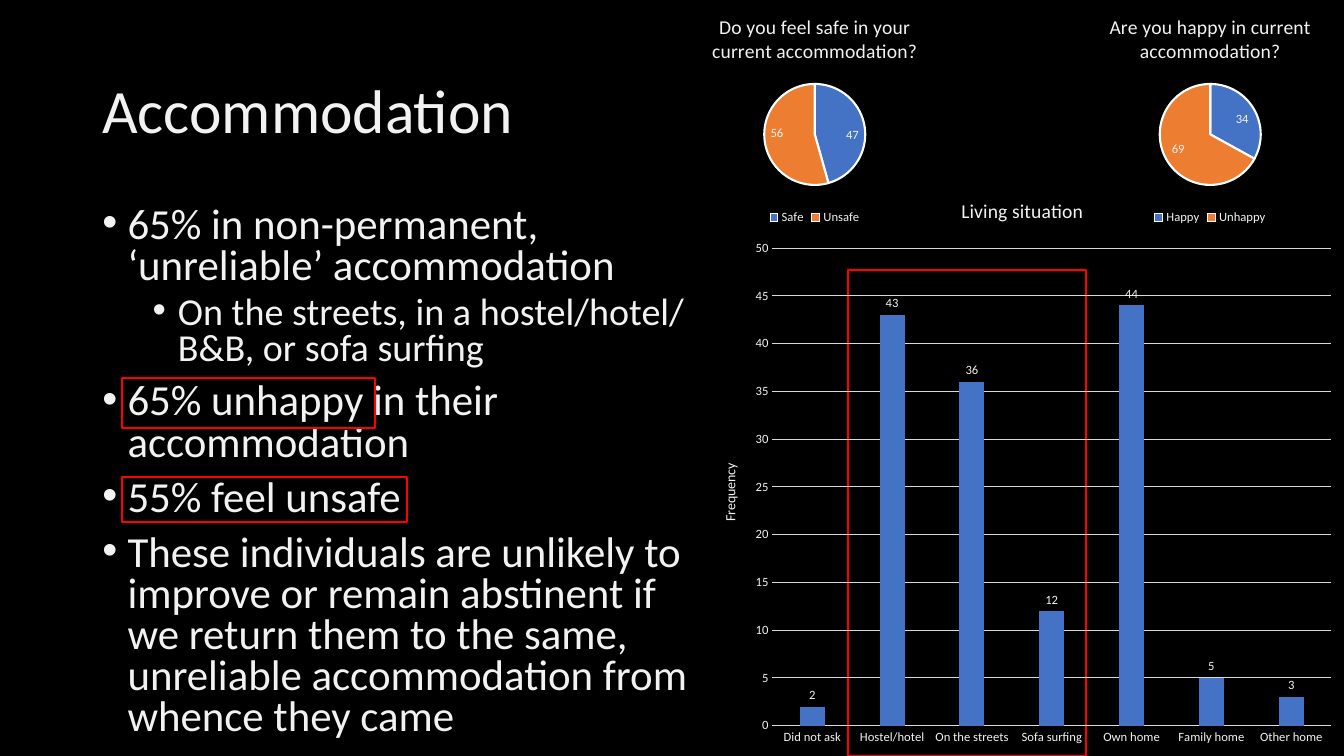
"""Builds the accommodation slide with its survey charts."""
from lxml import etree
from pptx import Presentation, oxml
from pptx.chart.data import CategoryChartData
from pptx.dml.color import RGBColor
from pptx.enum import chart as charts, shapes, text
from pptx.util import Pt

DRAWING = "http://schemas.openxmlformats.org/drawingml/2006/main"
CHART = "http://schemas.openxmlformats.org/drawingml/2006/chart"
PALE, GRID, RED, WHITE = "F2F2F2", "D9D9D9", "FF0000", "FFFFFF"
BLUE, ORANGE = "4472C4", "ED7D31"


def colour(code):
    return RGBColor.from_string(code)


class Page:
    """Holds the style and the current slide."""

    def __init__(self, deck, font="Calibri"):
        self.font = font
        self.slide = deck.slides.add_slide(deck.slide_layouts[6])
        fill = self.slide.background.fill
        fill.solid()
        fill.fore_color.rgb = colour("000000")

    def style(self, font, size):
        font.name = self.font
        font.size = Pt(size)
        font.bold = False
        font.color.rgb = colour(PALE)

    def text_box(self, place, anchor):
        frame = self.slide.shapes.add_textbox(*map(Pt, place)).text_frame
        frame.word_wrap = True
        frame.vertical_anchor = anchor
        return frame

    def title(self, place, wording):
        frame = self.text_box(place, text.MSO_ANCHOR.MIDDLE)
        frame.text = wording
        para = frame.paragraphs[0]
        para.line_spacing = 0.9
        self.style(para.runs[0].font, 44)

    def bullets(self, place, items):
        frame = self.text_box(place, text.MSO_ANCHOR.TOP)
        for index, (level, wording) in enumerate(items):
            para = frame.add_paragraph() if index else frame.paragraphs[0]
            para.text = wording
            para.level = level
            para.line_spacing = 0.8
            para.space_before = Pt(5 if level else 10)
            self.style(para.runs[0].font, 27.2 if level else 30.6)
            props = para._p.get_or_add_pPr()
            props.set("marL", str(Pt(18 + 36 * level)))
            props.set("indent", str(Pt(-18)))
            etree.SubElement(props, f"{{{DRAWING}}}buFont", typeface="Arial")
            etree.SubElement(props, f"{{{DRAWING}}}buChar", char="•")

    def frame(self, place):
        box = self.slide.shapes.add_shape(shapes.MSO_SHAPE.RECTANGLE, *map(Pt, place))
        box.shadow.inherit = False
        box.fill.background()
        box.line.color.rgb = colour(RED)
        box.line.width = Pt(1.5)

    def chart(self, kind, place, title, values, label_position):
        data = CategoryChartData()
        data.categories = list(values)
        data.add_series("Series 1", list(values.values()))
        chart = self.slide.shapes.add_chart(kind, *map(Pt, place), data).chart
        self.style(chart.font, 10)
        chart.element.find(f"{{{CHART}}}txPr").addprevious(oxml.parse_xml(
            f'<c:spPr xmlns:c="{CHART}" xmlns:a="{DRAWING}">'
            '<a:noFill/><a:ln><a:noFill/></a:ln></c:spPr>'))
        self.heading(chart.chart_title, title, 14)
        chart.chart_title.include_in_layout = False
        plot = chart.plots[0]
        plot.has_data_labels = True
        labels = plot.data_labels
        labels.show_value = True
        labels.position = label_position
        self.style(labels.font, 9)
        return chart

    def heading(self, holder, wording, size):
        holder.text_frame.text = wording
        self.style(holder.text_frame.paragraphs[0].runs[0].font, size)

    def pie(self, place, title, values):
        chart = self.chart(charts.XL_CHART_TYPE.PIE, place, title, values,
                           charts.XL_LABEL_POSITION.INSIDE_END)
        chart.has_legend = True
        chart.legend.position = charts.XL_LEGEND_POSITION.BOTTOM
        chart.legend.include_in_layout = False
        self.style(chart.legend.font, 9)
        plot = chart.plots[0]
        plot.vary_by_categories = True
        for index, code in enumerate((BLUE, ORANGE)):
            look = plot.series[0].points[index].format
            look.fill.solid()
            look.fill.fore_color.rgb = colour(code)
            look.line.color.rgb = colour(WHITE)
            look.line.width = Pt(1.5)

    def columns(self, place, title, values, axis_title):
        chart = self.chart(charts.XL_CHART_TYPE.COLUMN_CLUSTERED, place, title, values,
                           charts.XL_LABEL_POSITION.OUTSIDE_END)
        chart.has_legend = False
        plot = chart.plots[0]
        plot.vary_by_categories = False
        plot.gap_width = 219
        plot.overlap = -27
        fill = plot.series[0].format.fill
        fill.solid()
        fill.fore_color.rgb = colour(BLUE)
        across, upward = chart.category_axis, chart.value_axis
        for axis in (across, upward):
            axis.major_tick_mark = axis.minor_tick_mark = charts.XL_TICK_MARK.NONE
            self.style(axis.tick_labels.font, 9)
        upward.minimum_scale, upward.maximum_scale, upward.major_unit = 0, 50, 5
        upward.has_major_gridlines = True
        upward.format.line.fill.background()
        for line in (across.format.line, upward.major_gridlines.format.line):
            line.color.rgb = colour(GRID)
            line.width = Pt(0.75)
        self.heading(upward.axis_title, axis_title, 10)


def main():
    deck = Presentation()
    deck.slide_width, deck.slide_height = Pt(960), Pt(540)
    page = Page(deck)
    page.title((66, 28.75, 874, 104.4), "Accommodation")
    page.bullets((66, 144, 434, 396), [
        (0, "65% in non-permanent, ‘unreliable’ accommodation"),
        (1, "On the streets, in a hostel/hotel/ B&B, or sofa surfing"),
        (0, "65% unhappy in their accommodation"),
        (0, "55% feel unsafe"),
        (0, "These individuals are unlikely to improve or remain abstinent if we "
            "return them to the same, unreliable accommodation from whence they came"),
    ])
    for place in ((606, 193, 170, 347), (87, 270, 181, 36), (87, 340.5, 204, 32.5)):
        page.frame(place)
    page.columns((500.5, 126, 459.5, 414), "Living situation", {
        "Did not ask": 2, "Hostel/hotel": 43, "On the streets": 36, "Sofa surfing": 12,
        "Own home": 44, "Family home": 5, "Other home": 3}, "Frequency")
    page.pie((762.5, 0, 204, 163.5), "Are you happy in current accommodation?",
             {"Happy": 34, "Unhappy": 69})
    page.pie((480, 0, 204, 163.5), "Do you feel safe in your current accommodation?",
             {"Safe": 47, "Unsafe": 56})
    deck.save("out.pptx")


if __name__ == "__main__":
    main()
